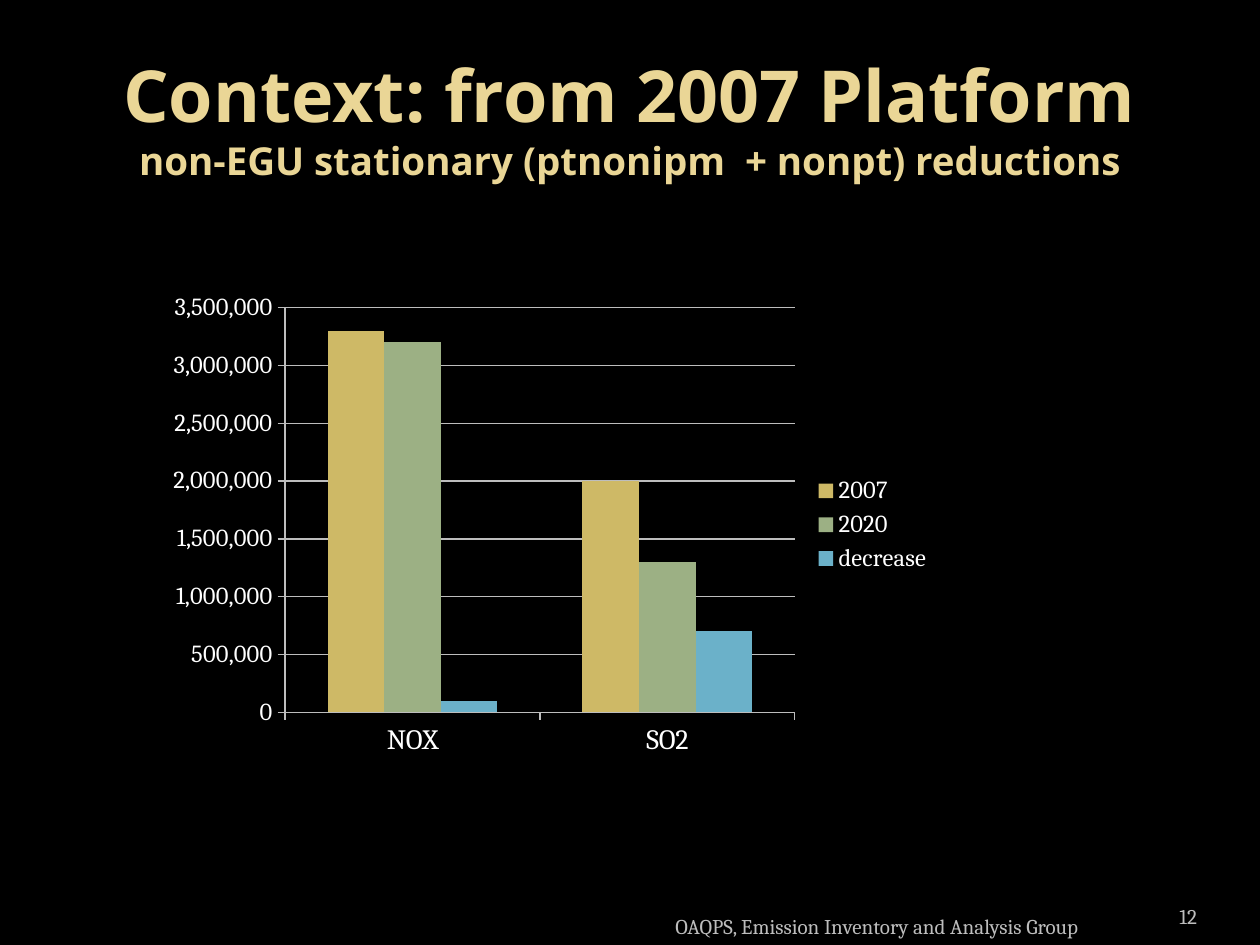
from pptx import Presentation
from pptx.chart.data import CategoryChartData
from pptx.dml.color import RGBColor
from pptx.enum import chart as c, text as t
from pptx.util import Inches, Pt

COLORS = {"background": "000000", "title": "EAD696", "footer": "BDBDBD",
          "chart text": "FFFFFF", "lines": "BDBDBD"}
TITLE_FONT, BODY_FONT = "Open Sans", "Cambria"

TITLE_LINES = [("Context: from 2007 Platform", 41),
               ("non-EGU stationary (ptnonipm  + nonpt) reductions", 22)]
FOOTERS = [
    ("OAQPS, Emission Inventory and Analysis Group",
     (4.92, 7.1, 4.08, 0.4), t.PP_ALIGN.CENTER, 0.1),
    ("12", (8.67, 7.02, 0.83, 0.4), t.PP_ALIGN.RIGHT, 0),
]
POLLUTANTS = ["NOX", "SO2"]
EMISSIONS = [
    ("2007", (3300000, 2000000), "CEB966"),
    ("2020", (3200000, 1300000), "9CB084"),
    ("decrease", (100000, 700000), "6BB1C9"),
]
CHART_BOX = (1.25, 2.25, 6.25, 3.83)


def style_font(font, name, size, color, bold=False):
    font.name, font.size, font.bold = name, Pt(size), bold
    font.color.rgb = RGBColor.from_string(COLORS[color])


def add_text_box(slide, box, anchor, alignment, side_inset=0.1):
    frame = slide.shapes.add_textbox(*map(Inches, box)).text_frame
    frame.word_wrap = True
    frame.vertical_anchor = anchor
    frame.margin_left = frame.margin_right = Inches(side_inset)
    paragraph = frame.paragraphs[0]
    paragraph.alignment = alignment
    return paragraph


def add_run(paragraph, words, *style):
    run = paragraph.add_run()
    run.text = words
    style_font(run.font, *style)


def add_emissions_chart(slide):
    data = CategoryChartData(number_format="#,##0")
    data.categories = POLLUTANTS
    for name, values, _ in EMISSIONS:
        data.add_series(name, values)
    chart = slide.shapes.add_chart(c.XL_CHART_TYPE.COLUMN_CLUSTERED,
                                   *map(Inches, CHART_BOX), data).chart
    style_font(chart.font, BODY_FONT, 10, "chart text")
    chart.has_title = False
    chart.has_legend = True
    chart.legend.position = c.XL_LEGEND_POSITION.RIGHT
    chart.legend.include_in_layout = False
    style_font(chart.legend.font, BODY_FONT, 14, "chart text")

    plot = chart.plots[0]
    plot.gap_width, plot.overlap, plot.vary_by_categories = 150, 0, False
    for series, (_, _, color) in zip(plot.series, EMISSIONS):
        series.format.fill.solid()
        series.format.fill.fore_color.rgb = RGBColor.from_string(color)

    value_axis = chart.value_axis
    value_axis.minimum_scale, value_axis.maximum_scale = 0, 3500000
    value_axis.major_unit = 500000
    value_axis.has_major_gridlines = True
    value_axis.tick_labels.number_format = "#,##0"
    value_axis.tick_labels.number_format_is_linked = False
    for axis, size in ((chart.category_axis, 16), (value_axis, 14)):
        axis.major_tick_mark = c.XL_TICK_MARK.OUTSIDE
        style_font(axis.tick_labels.font, BODY_FONT, size, "chart text")
    for lined in (chart.category_axis, value_axis, value_axis.major_gridlines):
        lined.format.line.width = Pt(0.75)
        lined.format.line.color.rgb = RGBColor.from_string(COLORS["lines"])


def main():
    presentation = Presentation()
    presentation.slide_width, presentation.slide_height = Inches(10), Inches(7.5)
    slide = presentation.slides.add_slide(presentation.slide_layouts[6])
    slide.background.fill.solid()
    slide.background.fill.fore_color.rgb = RGBColor.from_string(COLORS["background"])

    title = add_text_box(slide, (0.5, 0.3, 9, 1.25),
                         t.MSO_ANCHOR.MIDDLE, t.PP_ALIGN.CENTER)
    for index, (words, size) in enumerate(TITLE_LINES):
        if index:
            title.add_line_break()
        add_run(title, words, TITLE_FONT, size, "title", True)

    for words, box, alignment, inset in FOOTERS:
        footer = add_text_box(slide, box, t.MSO_ANCHOR.BOTTOM, alignment, inset)
        add_run(footer, words, BODY_FONT, 12, "footer")

    add_emissions_chart(slide)
    presentation.save("out.pptx")


if __name__ == "__main__":
    main()
